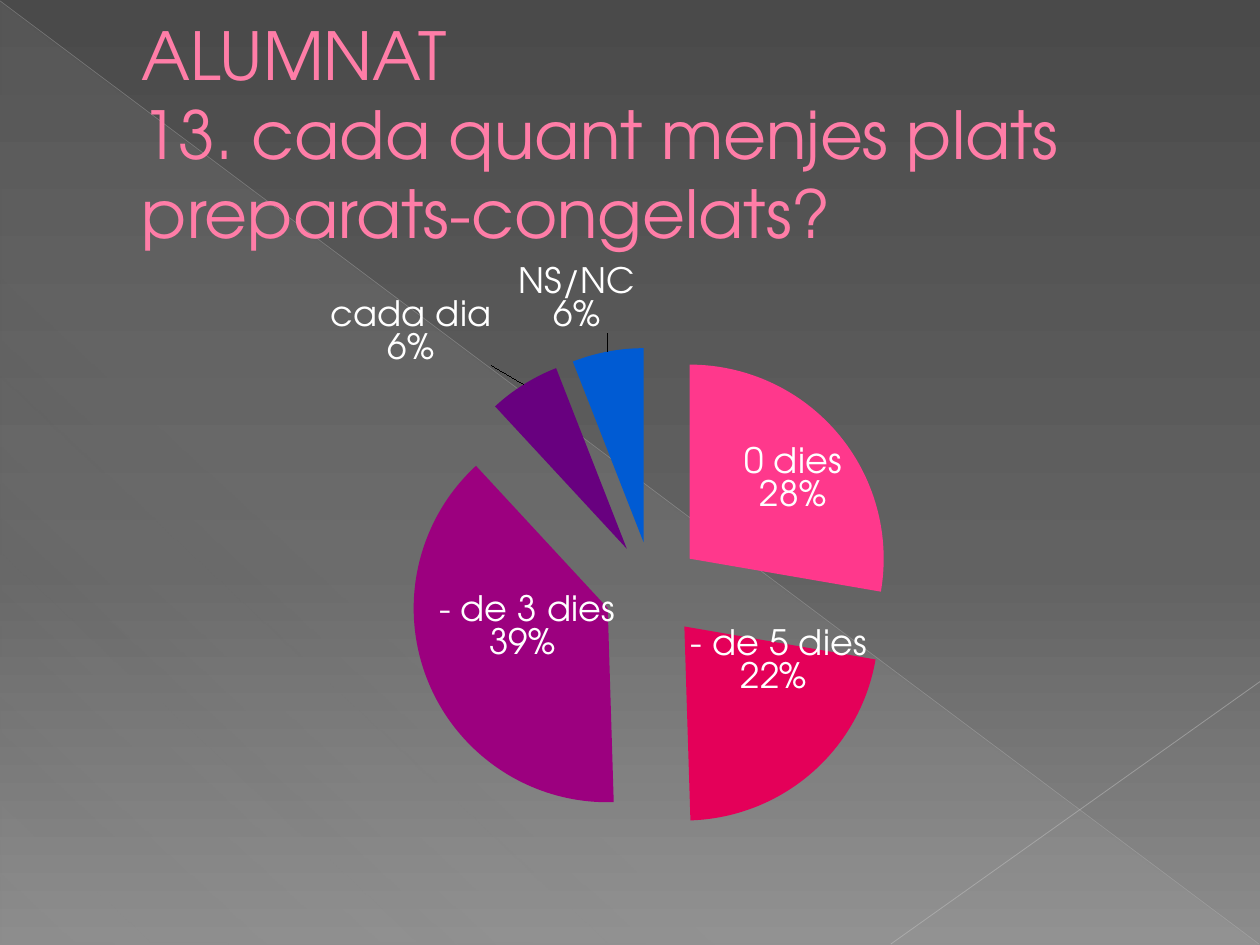
import pptx
import pptx.util
import pptx.chart.data
import pptx.dml.color
import pptx.enum.chart
import pptx.enum.shapes
import pptx.enum.text
import pptx.oxml
import pptx.oxml.ns
from lxml import etree

Pt = pptx.util.Pt
qn = pptx.oxml.ns.qn
RGB = pptx.dml.color.RGBColor.from_string
POS = pptx.enum.chart.XL_LABEL_POSITION
FONT = "TeX Gyre Adventor"
C = {
    "top": "4A4A4A", "middle": "626262", "bottom": "8C8C8C",
    "sheen": "D2D2D2", "diagonal": "BFBFBF", "corner": "C6C6C6",
    "title": "FF7DA7", "label": "FFFFFF",
    "pink": "FF388C", "red": "E40059", "magenta": "9C007F",
    "purple": "68007F", "blue": "005BD3",
}


def set_gradient(fill, element, stops, angle):
    fill.gradient()
    grad = element.find(".//" + qn("a:gradFill"))
    for child in list(grad):
        grad.remove(child)
    gs_list = etree.SubElement(grad, qn("a:gsLst"))
    for pos, color, alpha in stops:
        gs = etree.SubElement(gs_list, qn("a:gs"), pos=str(pos * 1000))
        clr = etree.SubElement(gs, qn("a:srgbClr"), val=C[color])
        if alpha < 100:
            etree.SubElement(clr, qn("a:alpha"), val=str(alpha * 1000))
    etree.SubElement(grad, qn("a:lin"), ang=str(angle * 60000), scaled="0")


def add_layout(parent, index, values):
    layout = etree.Element(qn("c:layout"))
    manual = etree.SubElement(layout, qn("c:manualLayout"))
    for tag, val in values.items():
        etree.SubElement(manual, qn("c:" + tag), val=str(val))
    parent.insert(index, layout)


prs = pptx.Presentation()
prs.slide_width, prs.slide_height = Pt(720), Pt(540)
s = prs.slides.add_slide(prs.slide_layouts[6])
set_gradient(s.background.fill, s.element,
             [(0, "top", 100), (60, "middle", 100), (100, "bottom", 100)], 90)

sp = s.shapes.add_shape(pptx.enum.shapes.MSO_SHAPE.RIGHT_TRIANGLE,
                        Pt(0.5), Pt(1), Pt(719), Pt(538.5))
sp.shadow.inherit = False
sp.line.fill.background()
set_gradient(sp.fill, sp.element,
             [(0, "sheen", 10), (70, "sheen", 8), (100, "sheen", 1)], 133)

for x1, y1, x2, y2, color, width, alpha in [
    (0, 0.5, 719.5, 539.5, "diagonal", 0.39, 35),
    (720, 389.5, 509, 539.5, "corner", 0.47, 45),
]:
    cn = s.shapes.add_connector(pptx.enum.shapes.MSO_CONNECTOR.STRAIGHT,
                                Pt(x1), Pt(y1), Pt(x2), Pt(y2))
    cn.line.color.rgb = RGB(C[color])
    cn.line.width = Pt(width)
    clr = cn.element.find(".//" + qn("a:srgbClr"))
    etree.SubElement(clr, qn("a:alpha"), val=str(alpha * 1000))
    etree.SubElement(cn.element.spPr, qn("a:effectLst"))

tb = s.shapes.add_textbox(Pt(36), Pt(21), Pt(648), Pt(110))
tf = tb.text_frame
tf.word_wrap = True
tf.vertical_anchor = pptx.enum.text.MSO_ANCHOR.MIDDLE
p = tf.paragraphs[0]
p.text = "ALUMNAT\v13. cada quant menjes plats preparats-congelats?"
p._p.get_or_add_pPr().set("marL", str(Pt(38)))
for r in p.runs:
    r.font.name = FONT
    r.font.size = Pt(37.8)
    r.font.color.rgb = RGB(C["title"])

slices = [
    ("0 dies", 28, "pink", POS.CENTER, 0.026, -0.025),
    (" - de 5 dies", 22, "red", POS.CENTER, 0.023, -0.06),
    (" - de 3 dies", 39, "magenta", POS.CENTER, 0.004, -0.027),
    ("cada dia", 6, "purple", POS.OUTSIDE_END, -0.025, -0.02),
    ("NS/NC", 6, "blue", POS.OUTSIDE_END, 0.026, -0.018),
]
cd = pptx.chart.data.CategoryChartData()
cd.categories = [row[0] for row in slices]
cd.add_series("Series 1", [row[1] for row in slices])
chart = s.shapes.add_chart(pptx.enum.chart.XL_CHART_TYPE.PIE,
                           Pt(36), Pt(148.5), Pt(648), Pt(360), cd).chart
chart.has_title = False
chart.has_legend = False
chart.font.name = FONT
chart.font.size = Pt(10)
chart.font.color.rgb = RGB(C["label"])

plot_area = chart.element.find(".//" + qn("c:plotArea"))
for old in plot_area.findall(qn("c:layout")):
    plot_area.remove(old)
add_layout(plot_area, 0, {"layoutTarget": "inner", "xMode": "edge", "yMode": "edge",
                          "x": 0.305, "y": 0.139, "w": 0.43, "h": 0.77})

plot = chart.plots[0]
plot.vary_by_categories = True
ser = plot.series[0]
for i, (name, value, color, position, dx, dy) in enumerate(slices):
    point = ser.points[i]
    point.format.fill.solid()
    point.format.fill.fore_color.rgb = RGB(C[color])
    point.format.line.fill.background()
    label = point.data_label
    label.font.name = FONT
    label.font.size = Pt(20)
    label.font.color.rgb = RGB(C["label"])
    label.position = position

explosion = etree.Element(qn("c:explosion"), val="25")
ser.format.fill.solid()
ser.format.fill.fore_color.rgb = RGB(C["pink"])
ser.format.line.fill.background()
ser_xml = plot_area.find(".//" + qn("c:ser"))
ser_xml.find(qn("c:spPr")).addnext(explosion)
for dpt in ser_xml.findall(qn("c:dPt")):
    dpt.find(qn("c:spPr")).addprevious(etree.Element(qn("c:explosion"), val="25"))

for row, dlbl in zip(slices, ser_xml.findall(".//" + qn("c:dLbl"))):
    add_layout(dlbl, 1, {"x": row[4], "y": row[5]})
    for tag, val in [("showVal", "0"), ("showCatName", "1"), ("showPercent", "1")]:
        dlbl.find(qn("c:" + tag)).set("val", val)
    etree.SubElement(dlbl, qn("c:separator")).text = "\n"

labels = ser.data_labels
labels.show_value = False
labels.show_category_name = True
labels.show_percentage = True
labels.font.name = FONT
labels.font.size = Pt(20)
labels.font.color.rgb = RGB(C["label"])

prs.save("out.pptx")
